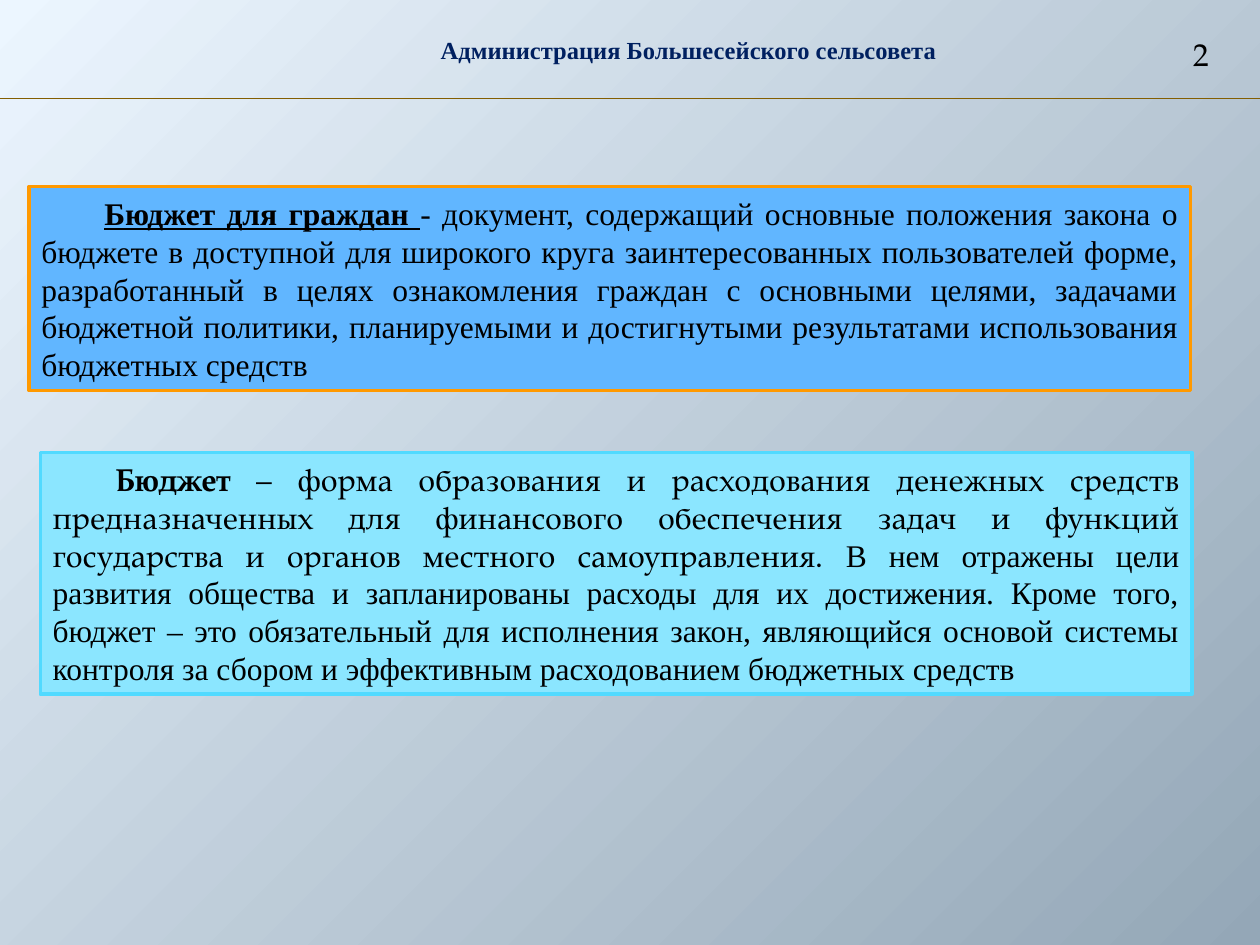
from lxml.etree import SubElement
from pptx import Presentation
from pptx.dml.color import RGBColor
from pptx.enum.shapes import MSO_CONNECTOR, MSO_SHAPE
from pptx.enum.text import MSO_ANCHOR, MSO_AUTO_SIZE, PP_ALIGN
from pptx.oxml.ns import qn
from pptx.util import Pt

PX = 9144  # 100 px to the inch
SERIF = "Times New Roman"
PAGELLA = "TeX Gyre Pagella"
COLORS = {
    "light": "ECF6FF", "dark": "94A7B7", "title": "002060", "rule": "835E01",
    "text": "000000", "blue": "61B6FF", "orange": "FF9900",
    "cyan": "8BE6FF", "cyan_edge": "51DAFF",
}


def color(name):
    return RGBColor.from_string(COLORS[name])


def style(para, font_name, size, color_name, align):
    para.alignment = align
    para.font.name = font_name
    para.font.size = Pt(size)
    para.font.color.rgb = color(color_name)


deck = Presentation()
deck.slide_width, deck.slide_height = 1000 * PX, 750 * PX
page = deck.slides.add_slide(deck.slide_layouts[5])

# Background gradient spreading from the top left corner
fill = page.background.fill
fill.gradient()
for stop, name in zip(fill.gradient_stops, ("light", "dark")):
    stop.color.rgb = color(name)
gradient = page.background._cSld.find(".//" + qn("a:gradFill"))
gradient.remove(gradient.find(qn("a:lin")))
spread = SubElement(gradient, qn("a:path"), path="circle")
SubElement(spread, qn("a:fillToRect"), r="100000", b="100000")

# Title
title = page.shapes.title
title.left, title.top, title.width, title.height = [n * PX for n in (109, 23, 875, 34)]
title.text_frame.text = "Администрация Большесейского сельсовета"
title.text_frame.auto_size = MSO_AUTO_SIZE.NONE
title.text_frame.vertical_anchor = MSO_ANCHOR.TOP
style(title.text_frame.paragraphs[0], SERIF, 14, "title", PP_ALIGN.CENTER)
title.text_frame.paragraphs[0].font.bold = True

# Rule under the title
rule = page.shapes.add_connector(MSO_CONNECTOR.STRAIGHT, 0, 78 * PX, 1000 * PX, 78 * PX)
rule.line.color.rgb = color("rule")
rule.line.width = Pt(0.75)
SubElement(rule._element.spPr, qn("a:effectLst"))

# Definitions: place, fill, edge, and spans of text, font, and whether bold and underlined
definitions = [
    ((23, 148, 922, 162), "blue", "orange", [
        ("Бюджет для граждан ", SERIF, True, True),
        ("- документ, содержащий основные положения закона о бюджете в доступной "
         "для широкого круга заинтересованных пользователей форме, разработанный "
         "в целях ознакомления граждан с основными целями, задачами бюджетной "
         "политики, планируемыми и достигнутыми результатами использования "
         "бюджетных средств", SERIF, False, False),
    ]),
    ((32, 359, 914, 192), "cyan", "cyan_edge", [
        ("Бюджет", PAGELLA, True, False),
        (" – форма образования и расходования денежных средств предназначенных "
         "для финансового обеспечения задач и функций государства и органов "
         "местного самоуправления.", PAGELLA, False, False),
        (" В нем отражены цели развития общества и запланированы расходы для их "
         "достижения. Кроме того, бюджет – это обязательный для исполнения закон, "
         "являющийся основой системы контроля за сбором и эффективным "
         "расходованием бюджетных средств", SERIF, False, False),
    ]),
]
for place, fill_name, edge_name, spans in definitions:
    box = page.shapes.add_shape(MSO_SHAPE.RECTANGLE, *[n * PX for n in place])
    box.shadow.inherit = False
    box.fill.solid()
    box.fill.fore_color.rgb = color(fill_name)
    box.line.color.rgb = color(edge_name)
    box.line.width = Pt(2)
    box.text_frame.word_wrap = True
    para = box.text_frame.paragraphs[0]
    style(para, SERIF, 18, "text", PP_ALIGN.JUSTIFY)
    para._p.get_or_add_pPr().set("indent", str(50 * PX))
    for text, font_name, bold, underline in spans:
        span = para.add_run()
        span.text = text
        span.font.name = font_name
        span.font.bold = bold
        span.font.underline = underline

# Page number
number = page.shapes.add_textbox(*[n * PX for n in (930, 23, 47, 40)])
number.text_frame.word_wrap = True
number.text_frame.text = "2"
style(number.text_frame.paragraphs[0], PAGELLA, 18, "text", PP_ALIGN.CENTER)

deck.save("out.pptx")
